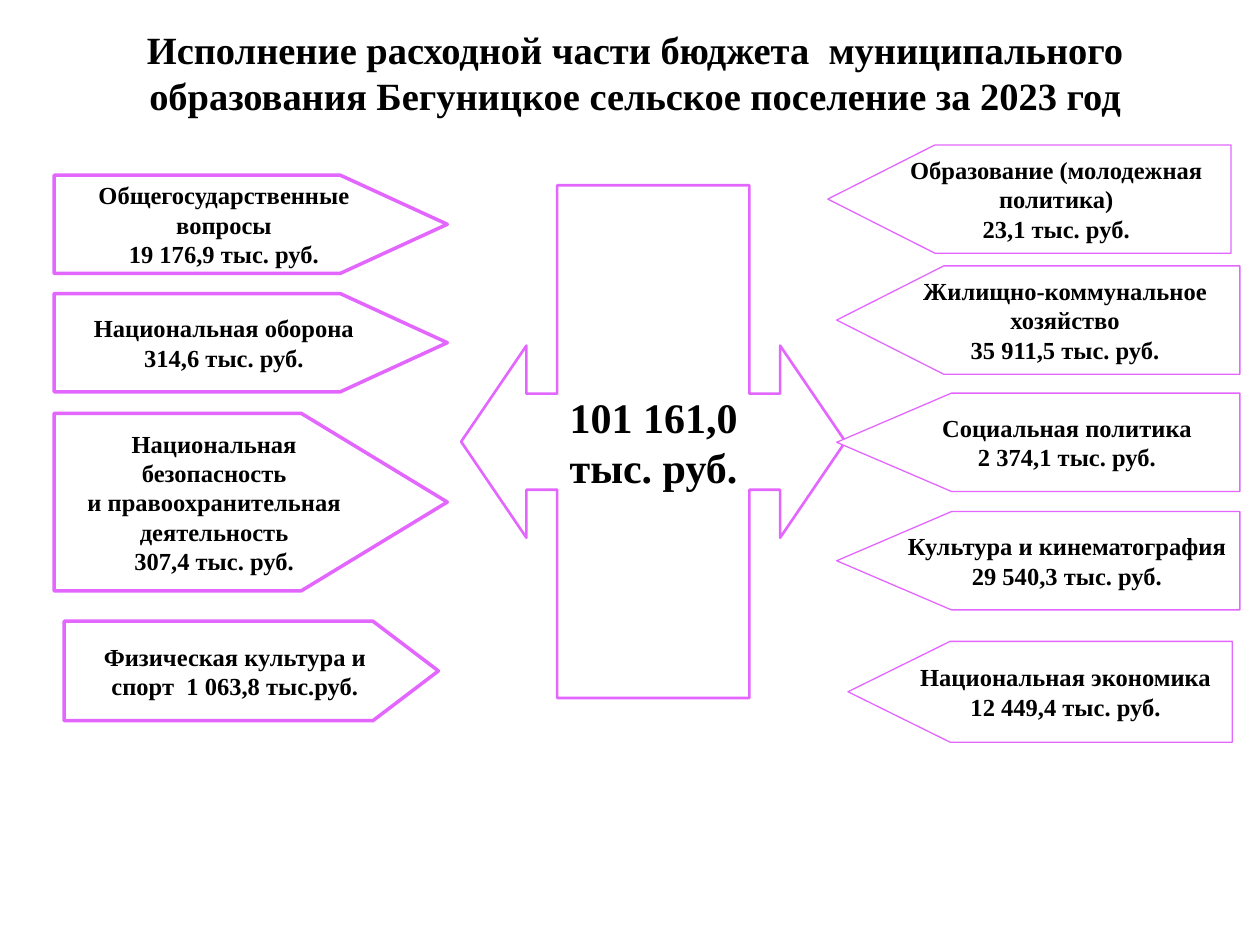
from pptx import Presentation
from pptx.dml.color import RGBColor
from pptx.enum.shapes import MSO_SHAPE
from pptx.enum.text import MSO_ANCHOR, PP_ALIGN
from pptx.util import Inches, Pt

THEME = {
    "font": "Times New Roman",
    "text": RGBColor(0x00, 0x00, 0x00),
    "fill": RGBColor(0xFF, 0xFF, 0xFF),
    "line": RGBColor(0xE3, 0x66, 0xFF),
    "title": 22, "total": 24, "label": 14,
    "left_line": 2, "total_line": 1.5, "right_line": 0.75,
}

# Content: text lines, box (left, top, width, height), length of the point
TITLE = ["Исполнение расходной части бюджета  муниципального "
         "образования Бегуницкое сельское поселение за 2023 год"]
TOTAL = ["101 161,0", "тыс. руб."]
LEFT = [
    (["Общегосударственные вопросы", "19 176,9 тыс. руб."],
     (0.43, 1.39, 3.12, 0.78), 0.85),
    (["Национальная оборона", "314,6 тыс. руб."],
     (0.43, 2.33, 3.12, 0.78), 0.85),
    (["Национальная безопасность", "и правоохранительная деятельность",
      "307,4 тыс. руб."],
     (0.43, 3.28, 3.12, 1.41), 1.16),
    (["Физическая культура и спорт  1 063,8 тыс.руб."],
     (0.51, 4.93, 2.97, 0.79), 0.52),
]
RIGHT = [
    (["Образование (молодежная политика)", "23,1 тыс. руб."],
     (6.57, 1.15, 3.2, 0.86), 0.85),
    (["Жилищно-коммунальное хозяйство", "35 911,5 тыс. руб."],
     (6.64, 2.11, 3.2, 0.86), 0.85),
    (["Социальная политика", "2 374,1 тыс. руб."],
     (6.64, 3.12, 3.2, 0.78), 0.91),
    (["Культура и кинематография", "29 540,3 тыс. руб."],
     (6.64, 4.06, 3.2, 0.78), 0.91),
    (["Национальная экономика", "12 449,4 тыс. руб."],
     (6.73, 5.09, 3.05, 0.8), 0.81),
]


def write_text(sp, lines, size, anchor=MSO_ANCHOR.MIDDLE, wrap=True):
    tf = sp.text_frame
    tf.word_wrap = wrap
    tf.vertical_anchor = anchor
    for i, line in enumerate(lines):
        p = tf.paragraphs[0] if i == 0 else tf.add_paragraph()
        p.alignment = PP_ALIGN.CENTER
        r = p.add_run()
        r.text = line
        r.font.name = THEME["font"]
        r.font.size = Pt(size)
        r.font.bold = True
        r.font.color.rgb = THEME["text"]
    return tf


def add_outlined(s, kind, box, adjustments, line_width, rotation=0):
    sp = s.shapes.add_shape(kind, *map(Inches, box))
    sp.shadow.inherit = False
    sp.rotation = rotation
    for i, value in enumerate(adjustments):
        sp.adjustments[i] = value
    sp.fill.solid()
    sp.fill.fore_color.rgb = THEME["fill"]
    sp.line.color.rgb = THEME["line"]
    sp.line.width = Pt(line_width)
    return sp


def add_tag(s, lines, box, point, line_width, flipped=False):
    sp = add_outlined(s, MSO_SHAPE.PENTAGON, box, [point / box[3]],
                      line_width, 180 if flipped else 0)
    tf = write_text(sp, lines, THEME["label"])
    if flipped:  # turn the text back upright
        tf._txBody.bodyPr.set("rot", "10800000")


def main():
    prs = Presentation()
    prs.slide_width, prs.slide_height = Inches(10), Inches(7.5)
    s = prs.slides.add_slide(prs.slide_layouts[6])

    # Title
    sp = s.shapes.add_textbox(*map(Inches, (0.39, 0.16, 9.3, 0.78)))
    tf = write_text(sp, TITLE, THEME["title"], anchor=MSO_ANCHOR.BOTTOM)
    tf.margin_left = tf.margin_right = tf.margin_bottom = 0

    # Central total, pointing to both columns
    sp = add_outlined(s, MSO_SHAPE.UP_DOWN_ARROW_CALLOUT,
                      (3.15, 1.98, 4.07, 3.05), (0.25, 0.25, 0.17, 0.5),
                      THEME["total_line"], 270)
    tf = write_text(sp, TOTAL, THEME["total"], wrap=False)
    tf._txBody.bodyPr.set("vert", "eaVert")

    # Expense items on either side
    for lines, box, point in LEFT:
        add_tag(s, lines, box, point, THEME["left_line"])
    for lines, box, point in RIGHT:
        add_tag(s, lines, box, point, THEME["right_line"], flipped=True)

    prs.save("out.pptx")


if __name__ == "__main__":
    main()
